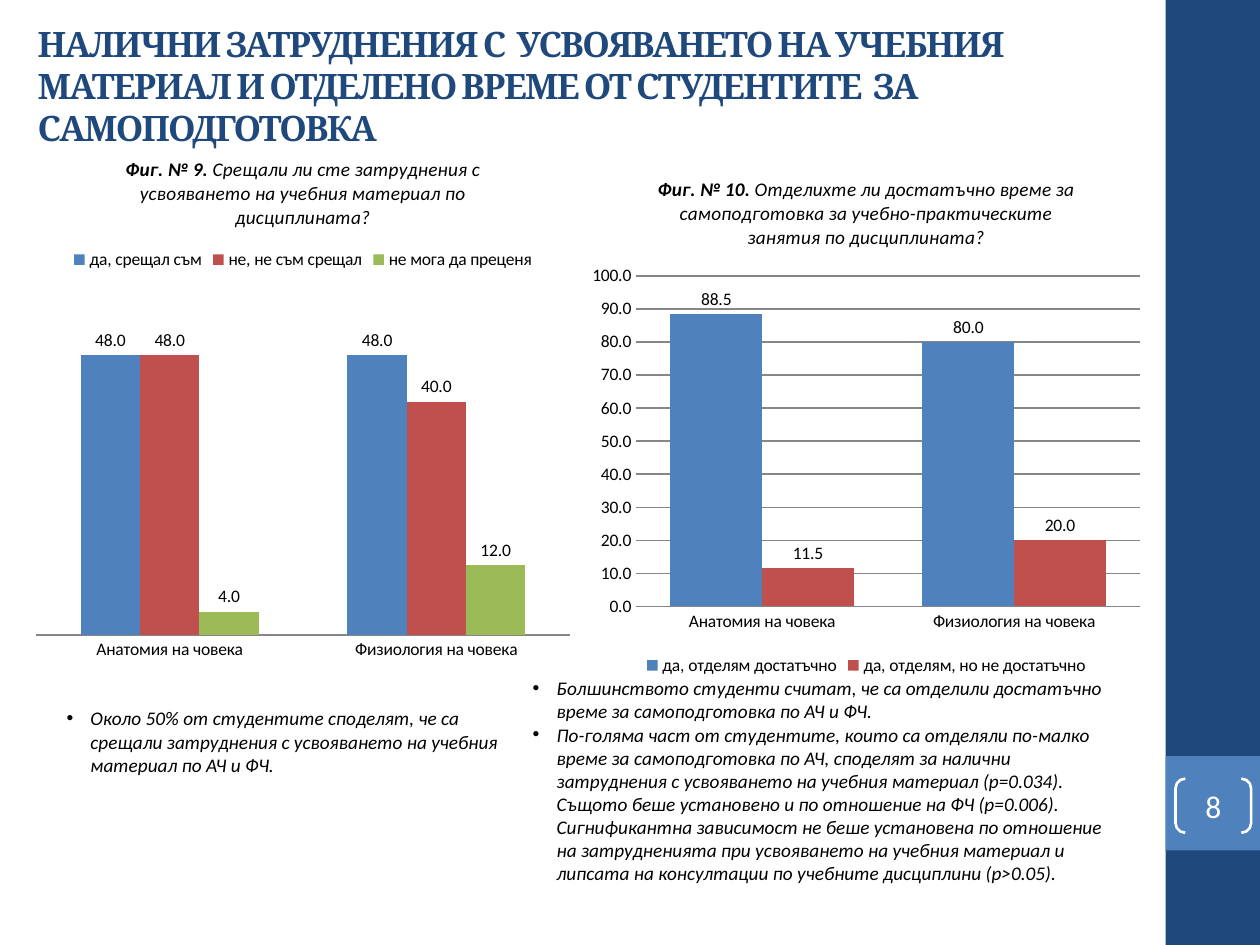
from lxml import etree
from pptx import Presentation
from pptx.chart.data import CategoryChartData
from pptx.dml.color import RGBColor
from pptx.enum.chart import XL_CHART_TYPE, XL_LABEL_POSITION, XL_LEGEND_POSITION, XL_TICK_MARK
from pptx.enum.shapes import MSO_SHAPE
from pptx.enum.text import MSO_ANCHOR, PP_ALIGN
from pptx.oxml.ns import qn
from pptx.util import Inches, Pt

COLUMN = XL_CHART_TYPE.COLUMN_CLUSTERED
TOP, BOTTOM = XL_LEGEND_POSITION.TOP, XL_LEGEND_POSITION.BOTTOM
OUT = XL_LABEL_POSITION.OUTSIDE_END
NO_TICK = XL_TICK_MARK.NONE
RECT, BRACKET = MSO_SHAPE.RECTANGLE, MSO_SHAPE.DOUBLE_BRACKET
MIDDLE, CENTER = MSO_ANCHOR.MIDDLE, PP_ALIGN.CENTER

COLORS = {"navy": "1F497D", "blue": "4F81BD", "red": "C0504D", "green": "9BBB59",
          "grid": "868686", "black": "000000", "white": "FFFFFF"}
SERIES = ("blue", "red", "green")
CATS = ("Анатомия на човека", "Физиология на човека")

HEAD = {"name": "Cambria", "size": Pt(20), "bold": True}
BODY = {"name": "Calibri", "size": Pt(11), "italic": True}
LABEL = {"name": "Calibri", "size": Pt(10)}
NUMBER = {"name": "Calibri", "size": Pt(18)}

TITLE = ("НАЛИЧНИ ЗАТРУДНЕНИЯ С  УСВОЯВАНЕТО НА УЧЕБНИЯ МАТЕРИАЛ И ОТДЕЛЕНО ВРЕМЕ "
         "ОТ СТУДЕНТИТЕ  ЗА САМОПОДГОТОВКА")
LEFT_NOTES = ["Около 50% от студентите споделят, че са срещали затруднения с усвояването "
              "на учебния материал по АЧ и ФЧ."]
RIGHT_NOTES = [
    "Болшинството студенти считат, че са отделили достатъчно време за самоподготовка "
    "по АЧ и ФЧ.",
    "По-голяма част от студентите, които са отделяли по-малко време за самоподготовка "
    "по АЧ, споделят за налични затруднения с усвояването на учебния материал (p=0.034). "
    "Същото беше установено и по отношение на ФЧ (p=0.006). Сигнификантна зависимост не "
    "беше установена по отношение на затрудненията при усвояването на учебния материал и "
    "липсата на консултации по учебните дисциплини (p>0.05).",
]


def rgb(name):
    return RGBColor.from_string(COLORS[name])


def style(font, form, color="black"):
    for key, value in form.items():
        setattr(font, key, value)
    font.color.rgb = rgb(color)


def add_run(para, text, form, color="black"):
    run = para.add_run()
    run.text = text
    style(run.font, form, color)
    return run


def add_shape(slide, kind, box, fill=None):
    shape = slide.shapes.add_shape(kind, *map(Inches, box))
    shape.shadow.inherit = False
    shape.line.fill.background()
    if fill:
        shape.fill.solid()
        shape.fill.fore_color.rgb = rgb(fill)
    else:
        shape.fill.background()
    return shape


def add_box(slide, box):
    frame = slide.shapes.add_textbox(*map(Inches, box)).text_frame
    frame.word_wrap = True
    return frame


def add_title(slide, box):
    frame = add_box(slide, box)
    frame.vertical_anchor = MIDDLE
    run = add_run(frame.paragraphs[0], TITLE, HEAD, "navy")
    run.font._element.set("spc", "-100")


def add_notes(slide, box, notes, after=0):
    frame = add_box(slide, box)
    for i, note in enumerate(notes):
        para = frame.add_paragraph() if i else frame.paragraphs[0]
        para.space_after = Pt(after)
        add_run(para, note, BODY)
        # Hanging bullet
        props = para._p.get_or_add_pPr()
        props.set("marL", str(Inches(0.19)))
        props.set("indent", str(-Inches(0.19)))
        etree.SubElement(props, qn("a:buFont")).set("typeface", "Arial")
        etree.SubElement(props, qn("a:buChar")).set("char", "•")


def add_page(slide, box, text):
    shape = add_shape(slide, BRACKET, box)
    shape.adjustments[0] = 0.18
    shape.line.color.rgb = rgb("white")
    shape.line.width = Pt(1.5)
    frame = shape.text_frame
    for side in ("left", "top", "right", "bottom"):
        setattr(frame, "margin_" + side, 0)
    frame.vertical_anchor = MIDDLE
    para = frame.paragraphs[0]
    para.alignment = CENTER
    add_run(para, text, NUMBER, "white")


def add_chart(slide, box, figure, ask, rows, gap, place):
    data = CategoryChartData(number_format="0.0")
    data.categories = CATS
    for name, values in rows:
        data.add_series(name, values)
    chart = slide.shapes.add_chart(COLUMN, *map(Inches, box), data).chart
    style(chart.font, LABEL)

    # Title and legend
    chart.has_title = True
    para = chart.chart_title.text_frame.paragraphs[0]
    add_run(para, figure, {**BODY, "bold": True})
    add_run(para, " " + ask, {**BODY, "bold": False})
    chart.chart_title.include_in_layout = False
    chart.has_legend = True
    chart.legend.position = place
    chart.legend.include_in_layout = False

    # Columns and their values
    plot = chart.plots[0]
    plot.vary_by_categories = False
    plot.gap_width = gap
    for series, color in zip(plot.series, SERIES):
        series.format.fill.solid()
        series.format.fill.fore_color.rgb = rgb(color)
    plot.has_data_labels = True
    labels = plot.data_labels
    form = {"show_value": True, "number_format": "0.0",
            "number_format_is_linked": False, "position": OUT}
    for key, value in form.items():
        setattr(labels, key, value)
    style(labels.font, LABEL)

    # Axes
    for axis in (chart.category_axis, chart.value_axis):
        axis.major_tick_mark = axis.minor_tick_mark = NO_TICK
        axis.format.line.color.rgb = rgb("grid")
    axis = chart.value_axis
    axis.has_major_gridlines = False
    axis.minimum_scale = 0
    axis.tick_labels.number_format = "0.0"
    axis.tick_labels.number_format_is_linked = False
    return chart


def add_grid(axis, top):
    axis.maximum_scale, axis.major_unit = top, 10
    axis.has_major_gridlines = True
    axis.major_gridlines.format.line.color.rgb = rgb("grid")
    axis.format.line.fill.background()


def main():
    deck = Presentation()
    deck.slide_width, deck.slide_height = Inches(10), Inches(7.5)
    slide = deck.slides.add_slide(deck.slide_layouts[6])

    # Side band and heading
    add_shape(slide, RECT, (9.25, 0, 0.75, 7.5), "navy")
    add_shape(slide, RECT, (9.25, 6, 0.75, 0.75), "blue")
    add_title(slide, (0.2, 0.21, 8.58, 0.94))
    add_page(slide, (9.33, 6.18, 0.6, 0.43), "8")

    # Difficulties
    add_notes(slide, (0.43, 5.56, 3.86, 0.87), LEFT_NOTES, 10)
    hard = add_chart(
        slide, (0.2, 1.07, 4.41, 4.25), "Фиг. № 9.",
        "Срещали ли сте затруднения с усвояването на учебния материал по дисциплината?",
        [("да, срещал съм", (48, 48)), ("не, не съм срещал", (48, 40)),
         ("не мога да преценя", (4, 12))], 150, TOP)
    hard.value_axis.maximum_scale = 60
    hard.value_axis.visible = False

    # Time for preparation
    time = add_chart(
        slide, (4.61, 1.23, 4.53, 4.17), "Фиг. № 10.",
        "Отделихте ли достатъчно време за самоподготовка за учебно-практическите "
        "занятия по дисциплината?",
        [("да, отделям достатъчно", (88.5, 80)),
         ("да, отделям, но не достатъчно", (11.5, 20))], 75, BOTTOM)
    add_grid(time.value_axis, 100)
    add_notes(slide, (4.13, 5.32, 4.8, 2.05), RIGHT_NOTES)

    deck.save("out.pptx")


if __name__ == "__main__":
    main()
